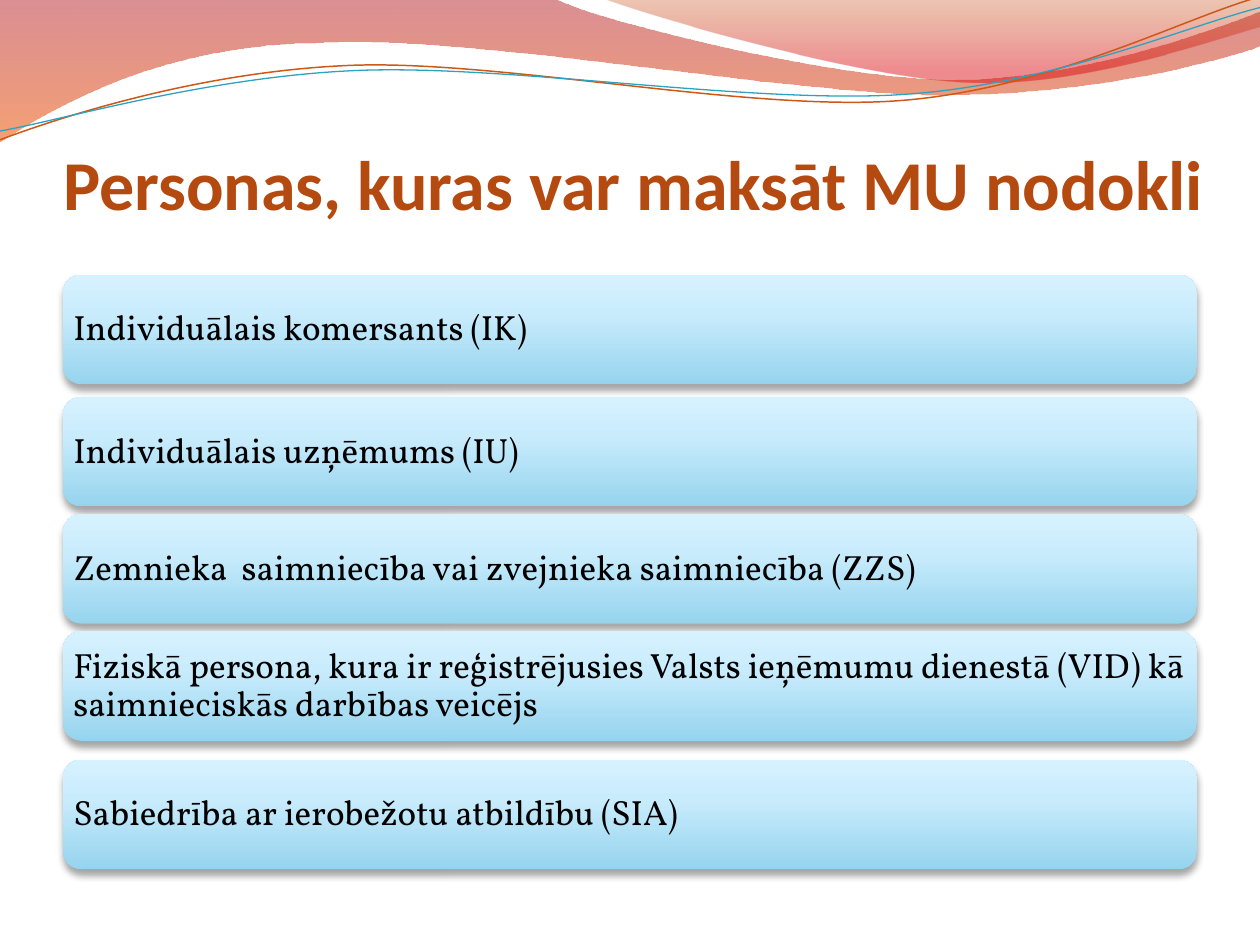
"""Builds the slide listing the persons who may pay the micro-enterprise tax."""
from dataclasses import dataclass

from lxml import etree
from pptx import Presentation
from pptx.dml.color import RGBColor
from pptx.enum.shapes import MSO_SHAPE
from pptx.enum.text import MSO_ANCHOR, MSO_AUTO_SIZE, PP_ALIGN
from pptx.oxml import parse_xml
from pptx.util import Inches, Pt

ROUNDED = MSO_SHAPE.ROUNDED_RECTANGLE
LEFT = PP_ALIGN.LEFT
BOTTOM, MIDDLE = MSO_ANCHOR.BOTTOM, MSO_ANCHOR.MIDDLE
NO_FIT = MSO_AUTO_SIZE.NONE
DRAWING = "http://schemas.openxmlformats.org/drawingml/2006/main"


@dataclass(frozen=True)
class Theme:
    title_font: str = "Calibri"
    title_size: int = 40
    title_color: str = "B54A10"
    body_font: str = "Vollkorn"
    body_size: int = 20
    body_color: str = "000000"
    wide_wave: tuple = ((0, "AF0911", 45), (100, "EE5300", 55))
    corner_wave: tuple = ((0, "C24400", 30), (80, "DC000B", 45))
    bar: tuple = ((0, "96D4EE", 100), (65, "C9ECFC", 100), (100, "D7F2FF", 100))
    orange_line: str = "CF5818"
    blue_line: str = "2DA2BF"


def draw_path(shapes, start, steps, closed):
    points = [(Inches(x), Inches(y)) for step in steps for x, y in step]
    builder = shapes.build_freeform(Inches(start[0]), Inches(start[1]), scale=1.0)
    builder.add_line_segments(points, close=closed)
    shape = builder.convert_to_shape()
    shape.shadow.inherit = False
    lines = iter(shape._element.xpath(".//a:lnTo"))
    for step in steps:
        group = [next(lines) for point in step]
        if len(group) == 3:
            bezier = etree.Element(f"{{{DRAWING}}}cubicBezTo")
            group[0].addprevious(bezier)
            for line in group:
                bezier.append(line[0])
                line.getparent().remove(line)
    return shape


def fill_gradient(shape, stops, angle):
    marks = "".join(
        f'<a:gs pos="{position * 1000}"><a:srgbClr val="{color}">'
        f'<a:alpha val="{opacity * 1000}"/></a:srgbClr></a:gs>'
        for position, color, opacity in stops)
    shape.line.fill.background()
    shape._element.spPr.insert(2, parse_xml(
        f'<a:gradFill xmlns:a="{DRAWING}" rotWithShape="1"><a:gsLst>{marks}</a:gsLst>'
        f'<a:lin ang="{angle * 60000}" scaled="0"/></a:gradFill>'))


theme = Theme()
deck = Presentation()
deck.slide_width, deck.slide_height = Inches(10), Inches(7.5)
page = deck.slides.add_slide(deck.slide_layouts[5])

waves = [
    (theme.wide_wave, (0, -0.01), [
        [(4.4, -0.01)],
        [(4.76, 0.17), (6.64, 0.63), (7.58, 0.63)],
        [(8.53, 0.63), (9.58, 0.26), (10, 0.09)],
        [(10.01, 0.36)],
        [(9.83, 0.44), (8.7, 0.76), (7.46, 0.75)],
        [(6.22, 0.75), (3.82, 0.28), (2.57, 0.34)],
        [(1.29, 0.35), (0.46, 0.83), (-0.01, 1.13)],
        [(0, -0.01)]]),
    (theme.corner_wave, (4.79, -0.01), [
        [(5.09, 0.11), (6.82, 0.62), (7.69, 0.65)],
        [(8.56, 0.69), (9.61, 0.32), (10, 0.21)],
        [(10, 0)],
        [(4.79, -0.01)]]),
]
for stops, start, steps in waves:
    wave = draw_path(page.shapes, start, steps, True)
    fill_gradient(wave, stops, 90)

curves = [
    (theme.orange_line, 0.85, (0, 1.11), [
        [(0.48, 0.93), (1.58, 0.57), (2.77, 0.52)],
        [(3.95, 0.47), (5.93, 0.89), (7.13, 0.8)],
        [(8.33, 0.71), (9.38, 0.15), (9.98, -0.02)]]),
    (theme.blue_line, 0.75, (0, 1.04), [
        [(0.47, 0.96), (1.64, 0.61), (2.83, 0.56)],
        [(4.03, 0.51), (5.97, 0.83), (7.17, 0.75)],
        [(8.36, 0.67), (9.41, 0.21), (10, 0.06)]]),
]
for color, width, start, steps in curves:
    curve = draw_path(page.shapes, start, steps, False)
    curve.fill.background()
    curve.line.color.rgb = RGBColor.from_string(color)
    curve.line.width = Pt(width)

title = page.shapes.title
title.left, title.top = Inches(0.5), Inches(0.77)
title.width, title.height = Inches(9.07), Inches(1.01)
frame = title.text_frame
frame.auto_size = NO_FIT
frame.word_wrap = True
frame.vertical_anchor = BOTTOM
frame.margin_left = frame.margin_right = frame.margin_bottom = 0
frame.margin_top = Inches(0.05)
para = frame.paragraphs[0]
para.alignment = LEFT
span = para.add_run()
span.text = "Personas, kuras var maksāt MU nodokli"
span.font.name = theme.title_font
span.font.size = Pt(theme.title_size)
span.font.bold = True
span.font.color.rgb = RGBColor.from_string(theme.title_color)

payers = [
    (2.18, "Individuālais komersants (IK)"),
    (3.15, "Individuālais uzņēmums (IU)"),
    (4.08, "Zemnieka  saimniecība vai zvejnieka saimniecība (ZZS)"),
    (5.01, "Fiziskā persona, kura ir reģistrējusies Valsts ieņēmumu dienestā (VID) kā "
           "saimnieciskās darbības veicējs"),
    (6.03, "Sabiedrība ar ierobežotu atbildību (SIA)"),
]
for top, payer in payers:
    box = page.shapes.add_shape(ROUNDED, Inches(0.5), Inches(top), Inches(9), Inches(0.87))
    fill_gradient(box, theme.bar, 270)
    effects = etree.SubElement(box._element.spPr, f"{{{DRAWING}}}effectLst")
    effects.append(parse_xml(
        f'<a:outerShdw xmlns:a="{DRAWING}" blurRad="{Pt(4)}" dist="{Pt(3)}" dir="5400000" '
        'rotWithShape="0"><a:srgbClr val="000000"><a:alpha val="35000"/></a:srgbClr>'
        '</a:outerShdw>'))
    frame = box.text_frame
    frame.word_wrap = True
    frame.vertical_anchor = MIDDLE
    frame.margin_left = frame.margin_right = Inches(0.04)
    frame.margin_top = frame.margin_bottom = Inches(0.08)
    para = frame.paragraphs[0]
    para.alignment = LEFT
    para.line_spacing = 0.9
    span = para.add_run()
    span.text = payer
    span.font.name = theme.body_font
    span.font.size = Pt(theme.body_size)
    span.font.color.rgb = RGBColor.from_string(theme.body_color)

deck.save("out.pptx")
